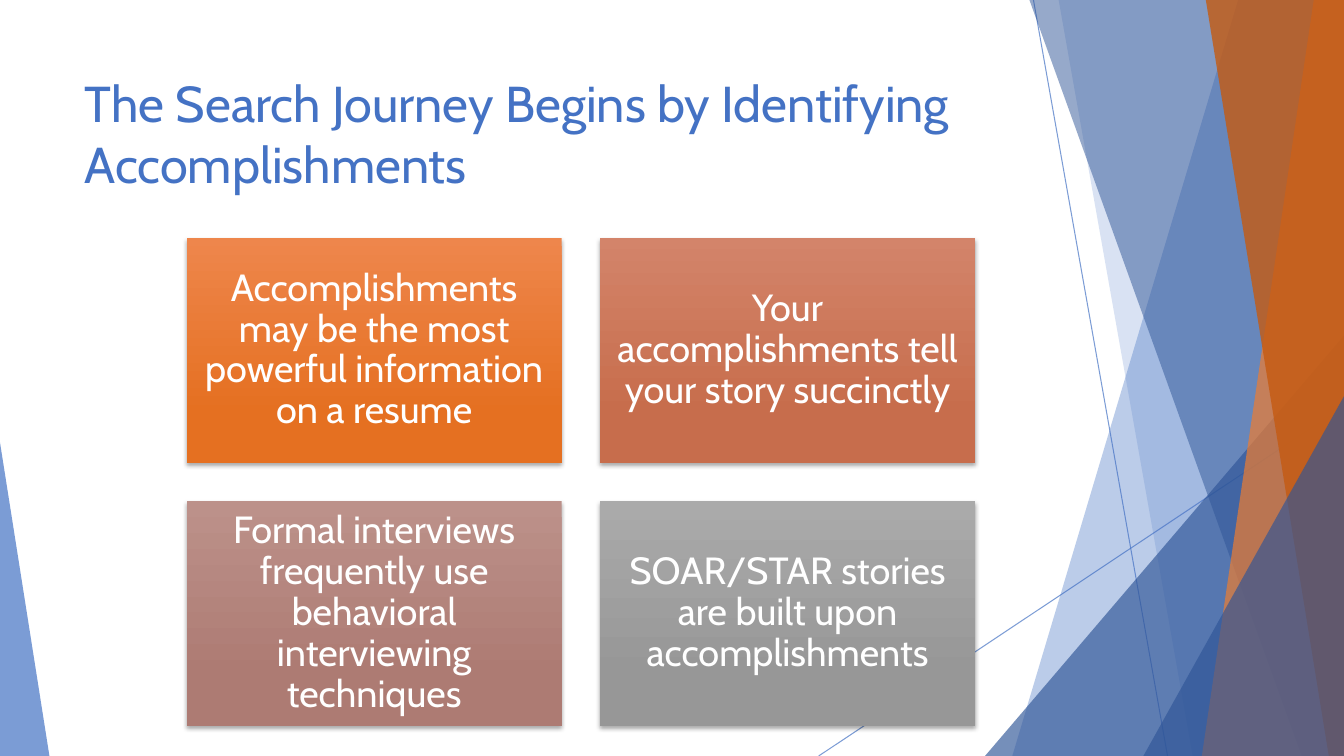
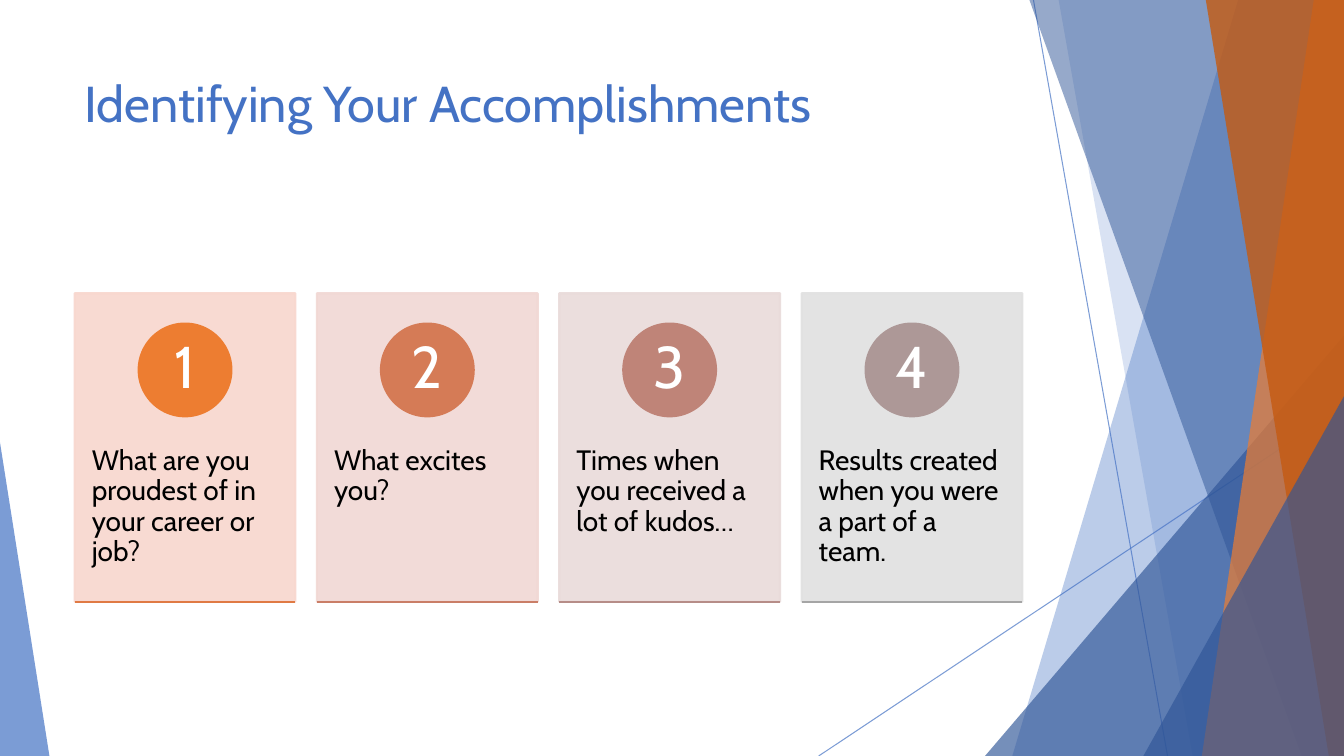
from lxml import etree
from pptx import Presentation
from pptx.dml.color import RGBColor
from pptx.enum.shapes import MSO_CONNECTOR, MSO_SHAPE
from pptx.enum.text import MSO_ANCHOR, PP_ALIGN
from pptx.oxml.ns import qn
from pptx.util import Inches, Pt

RECTANGLE = MSO_SHAPE.RECTANGLE
OVAL = MSO_SHAPE.OVAL
TRIANGLE = MSO_SHAPE.ISOSCELES_TRIANGLE
STRAIGHT = MSO_CONNECTOR.STRAIGHT
LEFT, CENTER = PP_ALIGN.LEFT, PP_ALIGN.CENTER
TOP, MIDDLE = MSO_ANCHOR.TOP, MSO_ANCHOR.MIDDLE

WIDTH, HEIGHT = 13.33, 7.5
MARGIN, CONTENT_WIDTH = 0.74, 9.4
TITLE_ONLY = 5
FONT = "Cabin"

COLORS = {
    "white": "FFFFFF",
    "black": "000000",
    "blue": "4472C4",
    "navy": "2F5597",
    "orange": "ED7D31",
    "rust": "C55A11",
}

STATEMENTS = [
    ("Accomplishments may be the most powerful information on a resume", "EE864C", "E57021"),
    ("Your accomplishments tell your story succinctly", "D3846A", "C76D4C"),
    ("Formal interviews frequently use behavioral interviewing techniques", "BC918A", "AD7B73"),
    ("SOAR/STAR stories are built upon accomplishments", "AAAAAA", "979797"),
]

QUESTIONS = [
    ("What are you proudest of in your career or job?", "F8D7CE", "ED7D31", "E07A44"),
    ("What excites you?", "F1D8D4", "D57B56", "CA7E67"),
    ("Times when you received a lot of kudos…", "E9DBDA", "BF8478", "B68D88"),
    ("Results created when you were a part of a team.", "E1E1E1", "AD9897", "A5A5A5"),
]


def rgb(color):
    return RGBColor.from_string(COLORS.get(color, color))


def inches(*lengths):
    return [Inches(length) for length in lengths]


def set_all(target, values):
    for name, value in values.items():
        setattr(target, name, value)


def make_translucent(shape, percent):
    for color in shape._element.spPr.iter(qn("a:srgbClr")):
        etree.SubElement(color, qn("a:alpha"), val=str(percent * 1000))


def paint(shape, fill, opacity=100, outline=None):
    shape.shadow.inherit = False
    shape.fill.solid()
    shape.fill.fore_color.rgb = rgb(fill)
    if outline:
        shape.line.color.rgb = rgb(fill)
        shape.line.width = Pt(outline)
    else:
        shape.line.fill.background()
    if opacity < 100:
        make_translucent(shape, opacity)


def write(shape, text, size, color, align=CENTER, anchor=MIDDLE, insets=None, spacing=0.9):
    frame = shape.text_frame
    frame.text = text
    set_all(frame, {"word_wrap": True, "vertical_anchor": anchor})
    if insets:
        sides = ("margin_left", "margin_top", "margin_right", "margin_bottom")
        set_all(frame, dict(zip(sides, inches(*insets))))
    paragraph = frame.paragraphs[0]
    set_all(paragraph, {"alignment": align, "line_spacing": spacing})
    font = paragraph.runs[0].font
    set_all(font, {"name": FONT, "size": Pt(size)})
    font.color.rgb = rgb(color)


def add_rule(slide, start, end, color, width, opacity=100):
    rule = slide.shapes.add_connector(STRAIGHT, *inches(*start, *end))
    rule.line.color.rgb = rgb(color)
    rule.line.width = Pt(width)
    etree.SubElement(rule._element.spPr, qn("a:effectLst"))
    if opacity < 100:
        make_translucent(rule, opacity)


def add_band(slide, top_x, bottom_x, color, opacity):
    corners = [(top_x, 0), (WIDTH, 0), (WIDTH, HEIGHT), (bottom_x, HEIGHT)]
    start, *others = [inches(*corner) for corner in corners]
    outline = slide.shapes.build_freeform(*start)
    outline.add_line_segments(others, close=True)
    paint(outline.convert_to_shape(), color, opacity)


def add_corner(slide, left, top, right, apex, color, opacity):
    corner = slide.shapes.add_shape(
        TRIANGLE, *inches(left, top, right - left, HEIGHT - top))
    corner.adjustments[0] = apex
    paint(corner, color, opacity)


def add_facets(slide):
    add_rule(slide, (10.25, 0), (11.58, HEIGHT), "blue", 0.75, 70)
    add_rule(slide, (WIDTH, 4.03), (8.12, HEIGHT), "blue", 0.75, 70)
    add_band(slide, 12.28, 10.04, "blue", 36)
    add_band(slide, 10.5, 11.83, "blue", 20)
    add_corner(slide, 9.77, 3.33, WIDTH, 1, "navy", 66)
    add_band(slide, 10.21, 12.91, "navy", 50)
    add_band(slide, 13.03, 11.92, "orange", 70)
    add_band(slide, 11.96, 13.18, "rust", 80)
    add_corner(slide, 11.34, 3.93, WIDTH, 1, "navy", 66)
    add_corner(slide, 0, 4.39, 0.49, 0, "blue", 70)


def prepare_layout(layout, slide):
    box = inches(MARGIN, 0.67, CONTENT_WIDTH, 1.44)
    set_all(layout.placeholders[0], dict(zip(("left", "top", "width", "height"), box)))
    add_facets(slide)
    facets = [shape for shape in slide.shapes if not shape.is_placeholder]
    for number, facet in enumerate(facets, 101):
        facet._element.xpath(".//p:cNvPr")[0].set("id", str(number))
        layout.shapes._spTree.append(facet._element)


def add_title(slide, text):
    write(slide.shapes.title, text, 36, "blue", LEFT, TOP, spacing=1.0)


def add_drop_shadow(shape):
    shape.shadow.inherit = False
    effects = shape._element.spPr.find(qn("a:effectLst"))
    shadow = etree.SubElement(effects, qn("a:outerShdw"), blurRad=str(Pt(3)),
                              dist=str(Pt(2)), dir="5400000", rotWithShape="0")
    color = etree.SubElement(shadow, qn("a:srgbClr"), val=COLORS["black"])
    etree.SubElement(color, qn("a:alpha"), val="35000")


def add_statement(slide, column, row, text, upper, lower):
    width, height, gap = 3.72, 2.23, 0.38
    left = 1.85 + column * (width + gap)
    top = 2.36 + row * (height + gap)
    tile = slide.shapes.add_shape(RECTANGLE, *inches(left, top, width, height))
    tile.fill.gradient()
    tile.fill.gradient_angle = 270
    for stop, color, position in zip(tile.fill.gradient_stops, (upper, lower), (0, 0.78)):
        stop.color.rgb = rgb(color)
        stop.position = position
    tile.line.fill.background()
    add_drop_shadow(tile)
    write(tile, text, 27, "white", insets=[0.11] * 4)


def add_question(slide, column, text, tint, badge_color, edge_color):
    top, width, height, badge_size = 2.91, 2.19, 3.06, 0.92
    gap = (CONTENT_WIDTH - len(QUESTIONS) * width) / (len(QUESTIONS) - 1)
    left = MARGIN + column * (width + gap)
    bottom = top + height
    card = slide.shapes.add_shape(RECTANGLE, *inches(left, top, width, height))
    paint(card, tint, 90, 1.5)
    write(card, text, 20, "black", LEFT, TOP, [0.17, 1.52, 0.17, 0.36])
    badge = slide.shapes.add_shape(OVAL, *inches(
        left + (width - badge_size) / 2, top + 0.3, badge_size, badge_size))
    paint(badge, badge_color, outline=1.5)
    write(badge, str(column + 1), 42, "white", insets=[0.07, 0.01, 0.07, 0.01])
    add_rule(slide, (left, bottom), (left + width, bottom), edge_color, 1.5)


def main():
    deck = Presentation()
    deck.slide_width, deck.slide_height = inches(WIDTH, HEIGHT)
    layout = deck.slide_layouts[TITLE_ONLY]

    journey = deck.slides.add_slide(layout)
    prepare_layout(layout, journey)
    add_title(journey, "The Search Journey Begins by Identifying Accomplishments")
    for index, statement in enumerate(STATEMENTS):
        row, column = divmod(index, 2)
        add_statement(journey, column, row, *statement)

    identifying = deck.slides.add_slide(layout)
    add_title(identifying, "Identifying Your Accomplishments")
    for column, question in enumerate(QUESTIONS):
        add_question(identifying, column, *question)

    deck.save("out.pptx")


if __name__ == "__main__":
    main()
